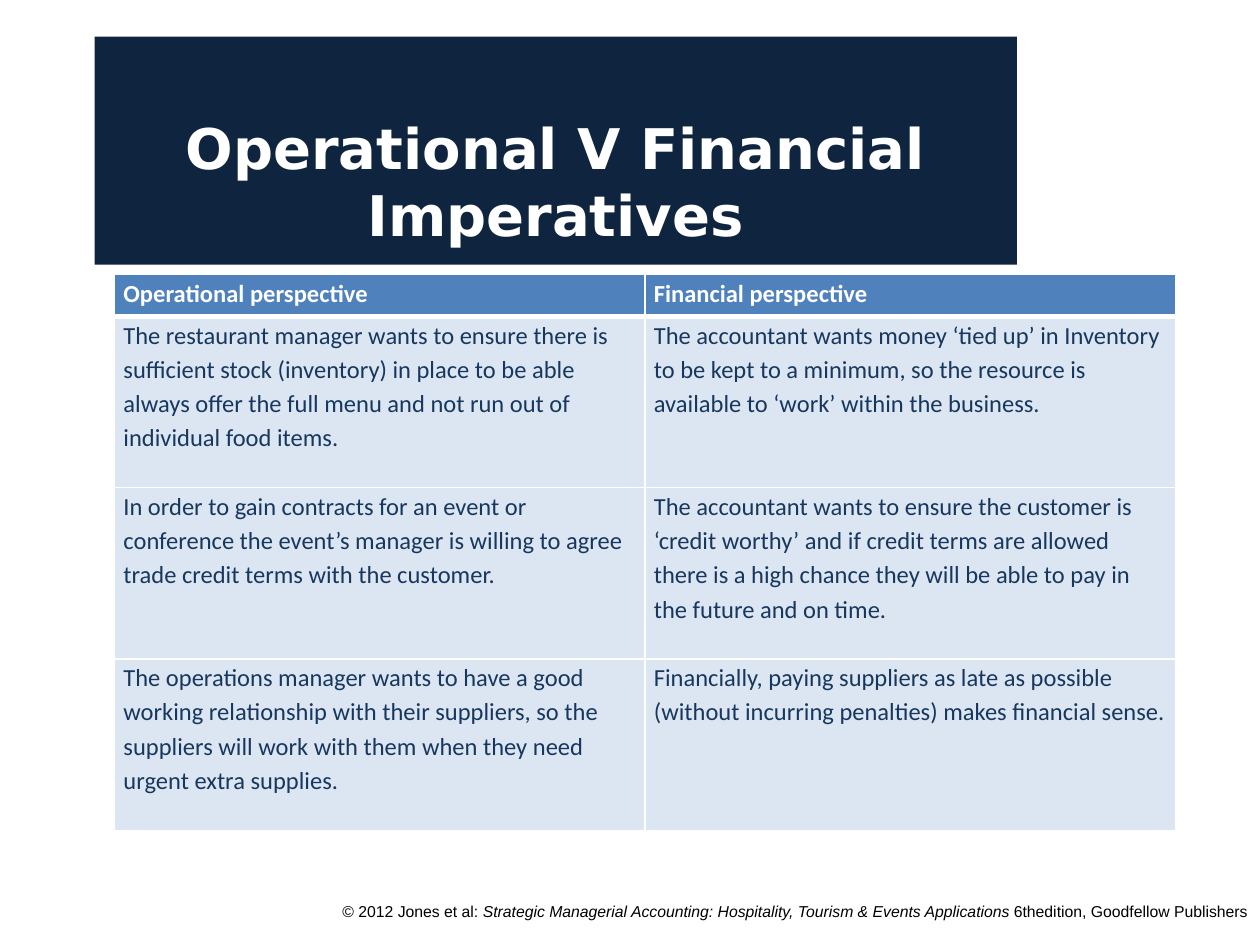
"""Build a slide comparing operational and financial imperatives."""
from lxml.etree import SubElement
from pptx import Presentation
from pptx.dml.color import RGBColor
from pptx.enum.text import MSO_ANCHOR as Anchor, PP_ALIGN as Align
from pptx.oxml.ns import qn
from pptx.util import Inches, Pt

NAVY, BLUE, PALE, INK = "0F243E", "4F81BD", "DCE6F2", "17375E"
WHITE, BLACK = "FFFFFF", "000000"

PERSPECTIVES = [
    ("Operational perspective", "Financial perspective"),
    ("The restaurant manager wants to ensure there is sufficient stock (inventory) in place "
     "to be able always offer the full menu and not run out of individual food items.",
     "The accountant wants money ‘tied up’ in Inventory to be kept to a minimum, so the "
     "resource is available to ‘work’ within the business."),
    ("In order to gain contracts for an event or conference the event’s manager is willing "
     "to agree trade credit terms with the customer.",
     "The accountant wants to ensure the customer is ‘credit worthy’ and if credit terms are "
     "allowed there is a high chance they will be able to pay in the future and on time."),
    ("The operations manager wants to have a good working relationship with their suppliers, "
     "so the suppliers will work with them when they need urgent extra supplies.",
     "Financially, paying suppliers as late as possible (without incurring penalties) makes "
     "financial sense."),
]
CITATION = [
    ("© 2012 Jones et al: ", False),
    ("Strategic Managerial Accounting: Hospitality, Tourism & Events Applications ", True),
    ("6thedition, Goodfellow Publishers", False),
]


def paint(target, color):
    """Give a fill a solid colour."""
    target.fill.solid()
    target.fill.fore_color.rgb = RGBColor.from_string(color)


def write(para, text, font, size, color, bold=False, italic=False):
    """Add a formatted span of text to a paragraph."""
    span = para.add_run()
    span.text = text
    span.font.name = font
    span.font.size = Pt(size)
    span.font.bold = bold
    span.font.italic = italic
    span.font.color.rgb = RGBColor.from_string(color)


def set_border(cell, side, color, width):
    """Draw one side of a table cell."""
    line = SubElement(cell._tc.get_or_add_tcPr(), qn(f"a:ln{side}"), w=str(Pt(width)))
    SubElement(SubElement(line, qn("a:solidFill")), qn("a:srgbClr"), val=color)


class SlideBuilder:
    """Hold the fonts and the current slide, and add its elements."""

    title_font, table_font, footer_font = "DejaVu Sans", "Calibri", "Arial"

    def __init__(self, deck):
        """Start a title slide without its subtitle."""
        self.page = deck.slides.add_slide(deck.slide_layouts[0])
        subtitle = self.page.placeholders[1].element
        subtitle.getparent().remove(subtitle)

    def footer(self, spans, left, top, width, height):
        """Add a right-aligned line of mixed spans."""
        box = self.page.shapes.add_textbox(left, top, width, height)
        box.text_frame.word_wrap = True
        para = box.text_frame.paragraphs[0]
        para.alignment = Align.RIGHT
        for text, italic in spans:
            write(para, text, self.footer_font, 9, BLACK, italic=italic)

    def title(self, text, left, top, width, height):
        """Place the title on a navy panel."""
        title = self.page.shapes.title
        title.left, title.top, title.width, title.height = left, top, width, height
        paint(title, NAVY)
        frame = title.text_frame
        frame.word_wrap = True
        frame.vertical_anchor = Anchor.BOTTOM
        frame.margin_bottom = Inches(0.13)
        para = frame.paragraphs[0]
        para.alignment = Align.CENTER
        write(para, text, self.title_font, 32, WHITE, bold=True)

    def table(self, rows, left, top, width, heights):
        """Add a table with a heading row and equal columns."""
        grid = self.page.shapes.add_table(
            len(rows), len(rows[0]), left, top, width, sum(heights)).table
        for row, height in zip(grid.rows, heights):
            row.height = height
        for r, texts in enumerate(rows):
            for c, text in enumerate(texts):
                self.cell(grid.cell(r, c), text, r)

    def cell(self, cell, text, row):
        """Fill one table cell in heading or body style."""
        heading = row == 0
        rule_above, rule_below = 3 if row == 1 else 1, 3 if heading else 1
        for side, width in zip("LRTB", (1, 1, rule_above, rule_below)):
            set_border(cell, side, WHITE, width)
        paint(cell, BLUE if heading else PALE)
        cell.margin_left = cell.margin_right = Inches(0.07)
        cell.margin_top = cell.margin_bottom = 0
        para = cell.text_frame.paragraphs[0]
        para.line_spacing = 1.15
        if heading:
            para.space_after = Pt(10)
        write(para, text, self.table_font, 14, WHITE if heading else INK, bold=heading)


def main():
    """Build and save the deck."""
    deck = Presentation()
    deck.slide_width, deck.slide_height = Inches(10), Inches(7.5)
    slide = SlideBuilder(deck)
    slide.footer(CITATION, Inches(2.23), Inches(7.11), Inches(7.77), Inches(0.39))
    slide.title("Operational V Financial Imperatives",
                Inches(0.75), Inches(0.29), Inches(7.32), Inches(1.81))
    slide.table(PERSPECTIVES, Inches(0.91), Inches(2.18), Inches(8.42),
                [Inches(0.33)] + [Inches(1.36)] * 3)
    deck.save("out.pptx")


if __name__ == "__main__":
    main()
